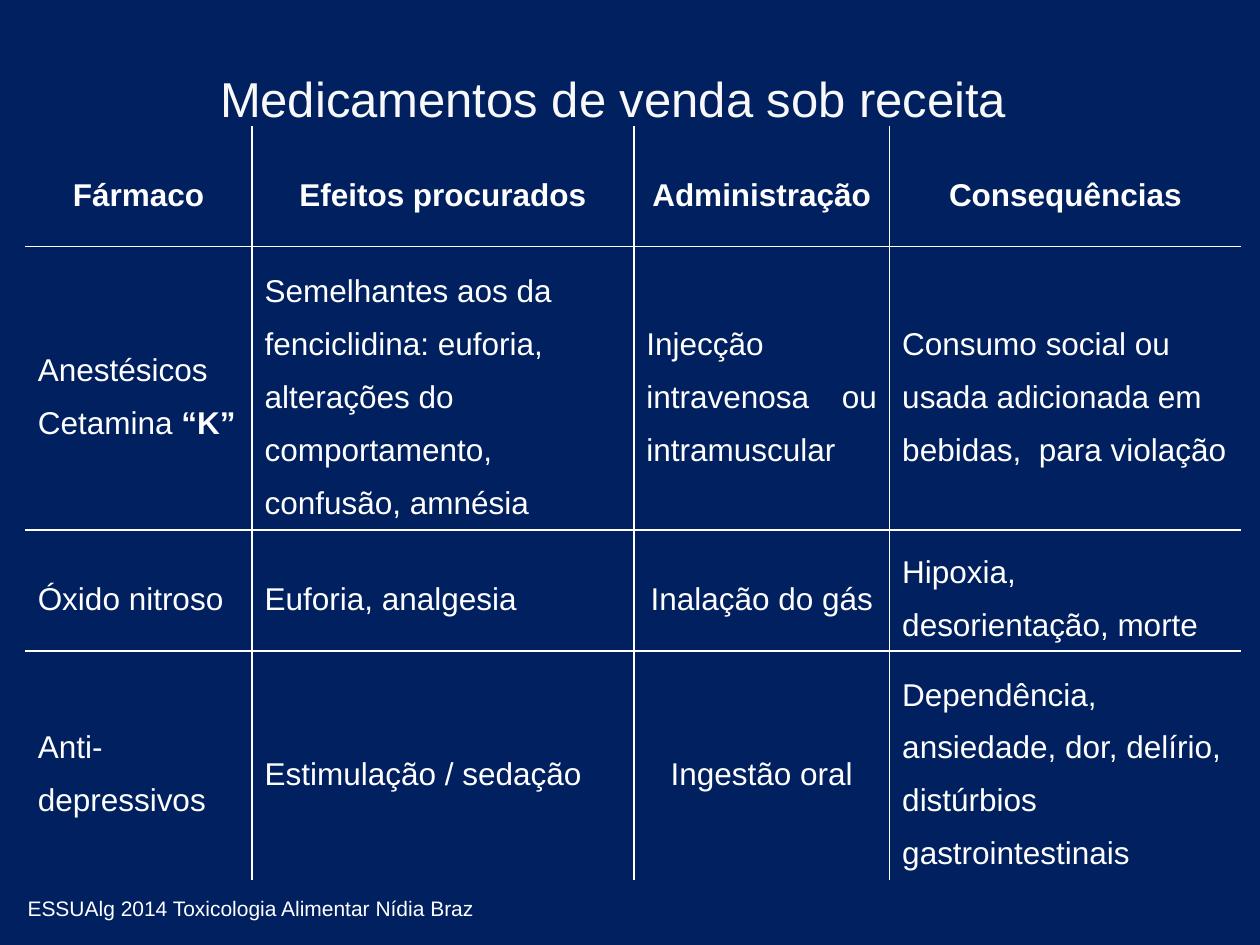
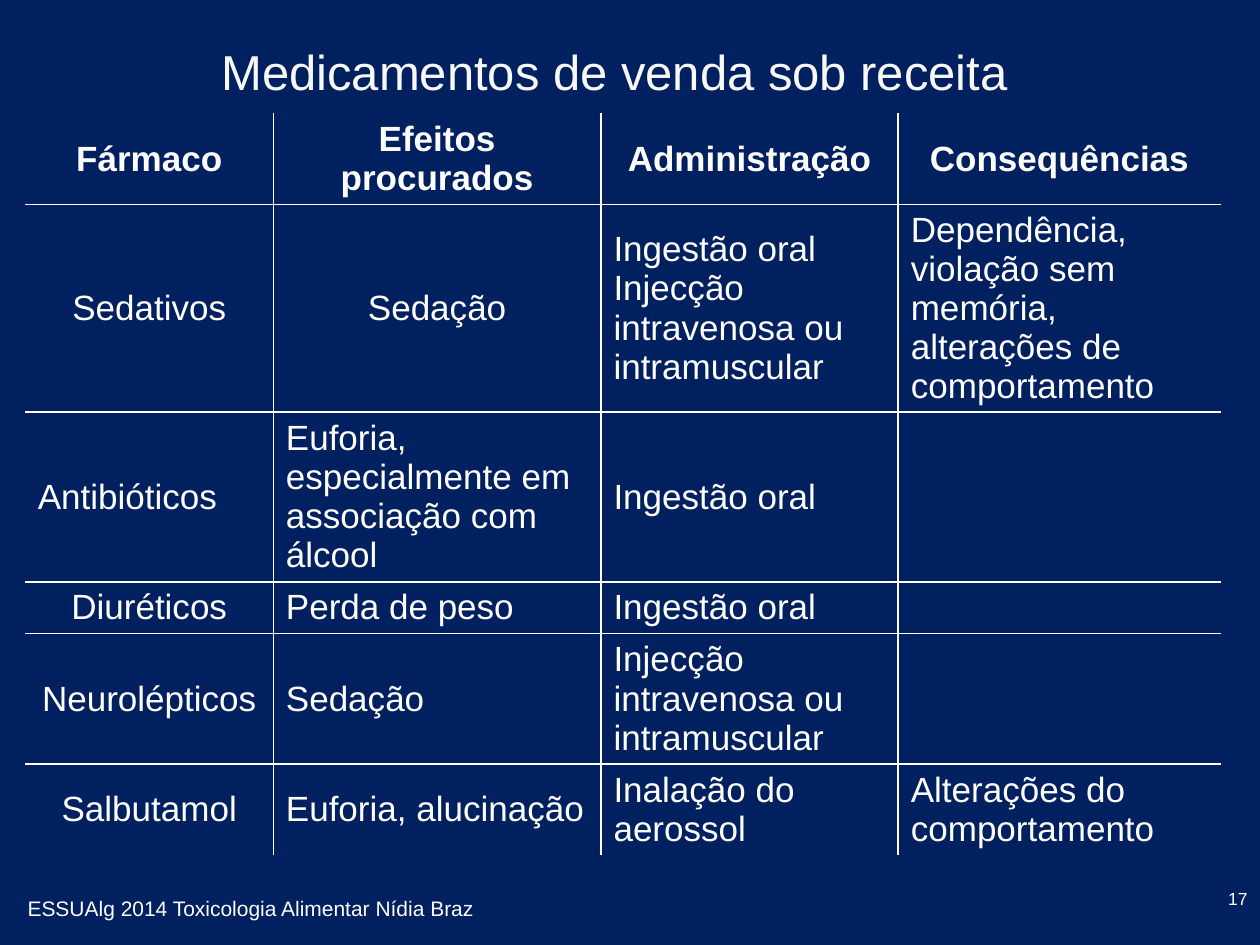
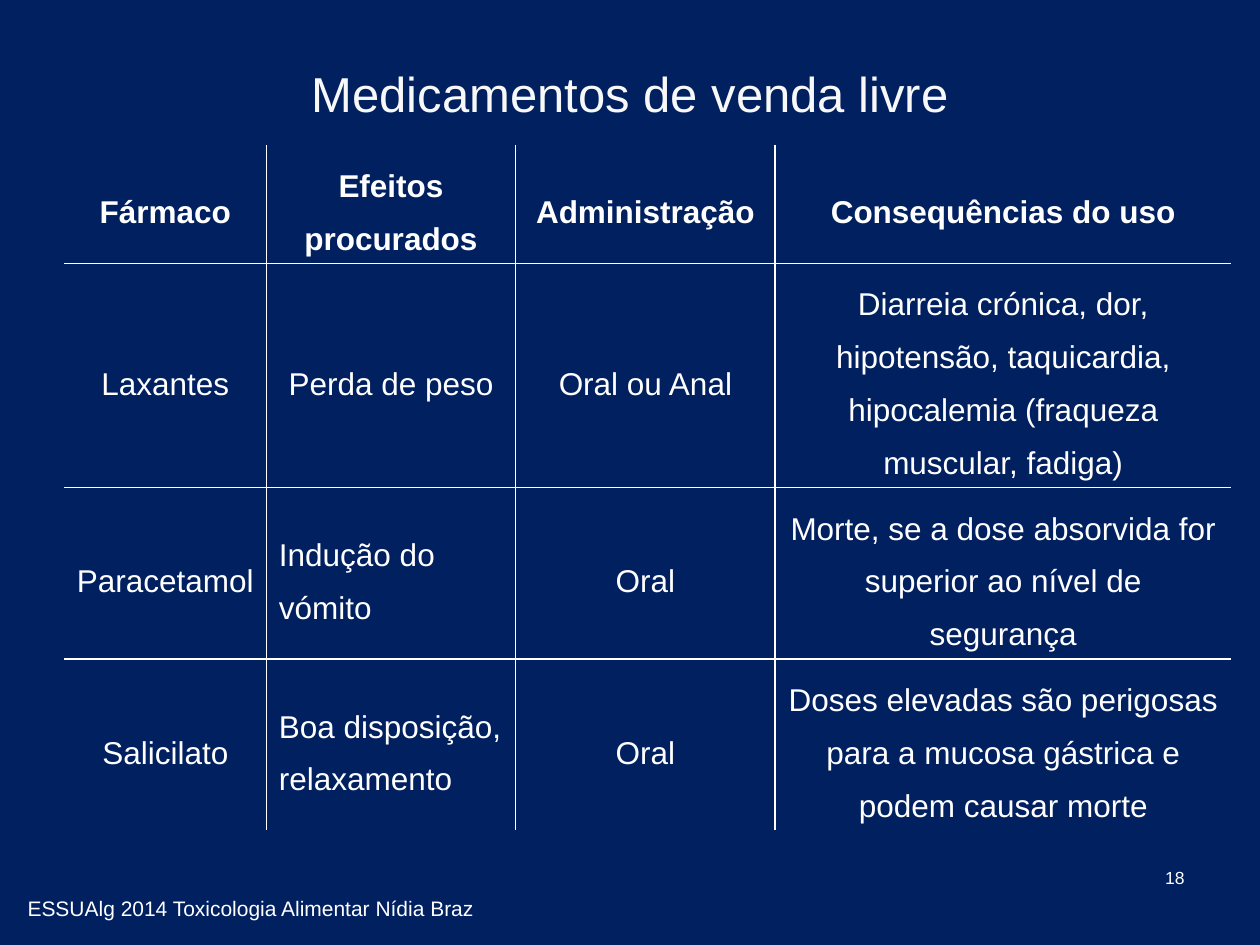
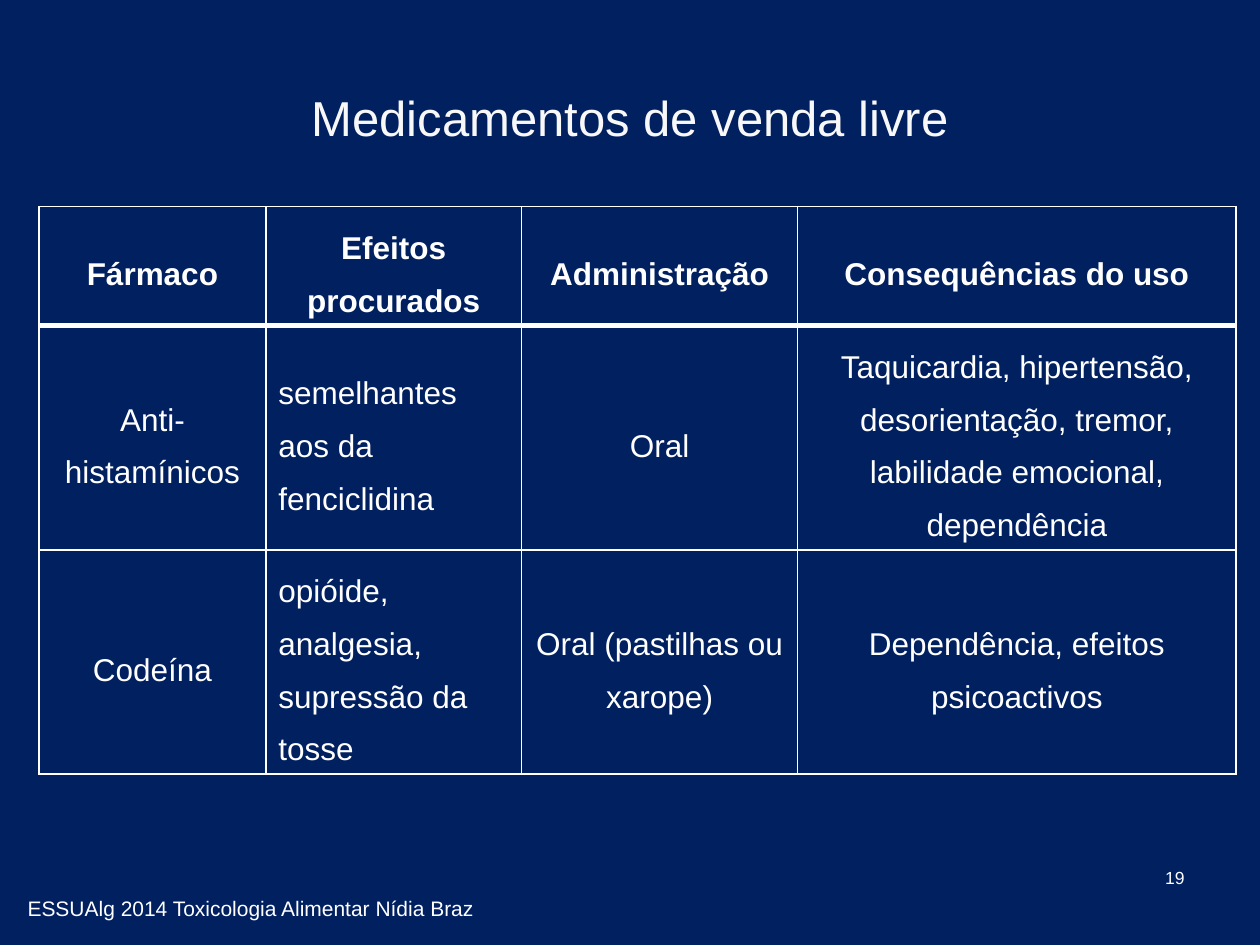
from dataclasses import dataclass

from lxml import etree
from pptx import Presentation
from pptx.dml.color import RGBColor
from pptx.enum.text import MSO_ANCHOR, MSO_AUTO_SIZE, PP_ALIGN
from pptx.oxml.ns import qn
from pptx.util import Pt

MIDDLE = MSO_ANCHOR.MIDDLE
NO_AUTOFIT = MSO_AUTO_SIZE.NONE
ALIGN = {"l": PP_ALIGN.LEFT, "c": PP_ALIGN.CENTER,
         "r": PP_ALIGN.RIGHT, "j": PP_ALIGN.JUSTIFY}
TITLE_ONLY = 5


@dataclass(frozen=True)
class Theme:
    font: str = "Arial"
    background: str = "002060"
    title_color: str = "F8F8F8"
    text_color: str = "FFFFFF"
    title_size: int = 28
    footer_size: int = 12
    number_size: int = 10
    rule: int = 1
    heavy_rule: int = 3


THEME = Theme()
FOOTER = "ESSUAlg 2014 Toxicologia Alimentar Nídia Braz"
FOOTER_BOX = (8.64, 508.3, 326, 23)
NUMBER_SIZE = (167.8, 36)
STREET_NAME = "“K”"  # the one bold part inside a body cell

PRESCRIPTION = "Medicamentos de venda sob receita"
OVER_THE_COUNTER = "Medicamentos de venda livre"
HEADINGS = ["Fármaco", "Efeitos procurados", "Administração"]
PRESCRIPTION_HEADINGS = HEADINGS + ["Consequências"]
FREE_HEADINGS = HEADINGS + ["Consequências do uso"]

# Each body row: one alignment letter per column, then the cells.
SLIDES = [
    dict(
        title=PRESCRIPTION, title_box=(16.6, 21.6, 667.4, 68.4),
        origin=(14.4, 72), columns=[129.6, 218.2, 146.2, 200.9],
        row_heights=[69, 162, 69, 131], size=18, spacing=1.5,
        headings=PRESCRIPTION_HEADINGS,
        body=[
            ("lljl", ["Anestésicos\nCetamina " + STREET_NAME,
                      "Semelhantes aos da fenciclidina: euforia, alterações do "
                      "comportamento, confusão, amnésia",
                      "Injecção intravenosa ou intramuscular",
                      "Consumo social ou usada adicionada em bebidas,  para violação"]),
            ("llcl", ["Óxido nitroso", "Euforia, analgesia", "Inalação do gás",
                      "Hipoxia, desorientação, morte"]),
            ("llcl", ["Anti-depressivos", "Estimulação / sedação", "Ingestão oral",
                      "Dependência, ansiedade, dor, delírio, distúrbios "
                      "gastrointestinais"]),
        ]),
    dict(
        title=PRESCRIPTION, title_box=(20.2, 15.1, 661.7, 51.1),
        origin=(14.4, 64.8), columns=[141.8, 187.2, 169.9, 184.3],
        row_heights=[52, 118.5, 97, 29.5, 74.5, 52], size=20, spacing=1,
        headings=PRESCRIPTION_HEADINGS,
        number="17", number_at=(552.2, 504),
        body=[
            ("ccll", ["Sedativos", "Sedação",
                      "Ingestão oral\nInjecção intravenosa ou intramuscular",
                      "Dependência,\nviolação sem memória,\n"
                      "alterações de comportamento"]),
            ("llll", ["Antibióticos", "Euforia, especialmente em associação com álcool",
                      "Ingestão oral", ""]),
            ("clll", ["Diuréticos", "Perda de peso", "Ingestão oral", ""]),
            ("clll", ["Neurolépticos", "Sedação",
                      "Injecção intravenosa ou intramuscular", ""]),
            ("clll", ["Salbutamol", "Euforia, alucinação", "Inalação do aerossol",
                      "Alterações do comportamento"]),
        ]),
    dict(
        title=OVER_THE_COUNTER, title_box=(36, 21.6, 648, 62.6),
        origin=(36.7, 82.8), columns=[115.5, 142.5, 148.3, 260.6],
        row_heights=[67.5, 128, 98, 98], size=18, spacing=1.5,
        headings=FREE_HEADINGS,
        number="18", number_at=(516.2, 491.8),
        body=[
            ("cccc", ["Laxantes", "Perda de peso", "Oral ou Anal",
                      "Diarreia crónica, dor, hipotensão, taquicardia, "
                      "hipocalemia (fraqueza muscular, fadiga)"]),
            ("llcc", ["Paracetamol", "Indução do vómito", "Oral",
                      "Morte, se a dose absorvida for superior ao nível de segurança"]),
            ("clcc", ["Salicilato", "Boa disposição, relaxamento", "Oral",
                      "Doses elevadas são perigosas para a mucosa gástrica e "
                      "podem causar morte"]),
        ]),
    dict(
        title=OVER_THE_COUNTER, title_box=(36, 21.6, 648, 90),
        origin=(22.3, 118.1), columns=[129.6, 146.2, 157.7, 250.6],
        row_heights=[68, 128, 128], size=18, spacing=1.5, framed=True,
        headings=FREE_HEADINGS,
        number="19", number_at=(516.2, 491.8),
        body=[
            ("clcc", ["Anti-histamínicos", "semelhantes aos da fenciclidina", "Oral",
                      "Taquicardia, hipertensão, desorientação, tremor, "
                      "labilidade emocional, dependência"]),
            ("clcc", ["Codeína", "opióide, analgesia, supressão da tosse",
                      "Oral (pastilhas ou xarope)",
                      "Dependência, efeitos psicoactivos"]),
        ]),
]


def format_text(frame, size, color=THEME.text_color, align="l", bold=False, spacing=None):
    for paragraph in frame.paragraphs:
        paragraph.alignment = ALIGN[align]
        paragraph.line_spacing = spacing
        for run in paragraph.runs:
            run.font.name = THEME.font
            run.font.size = Pt(size)
            run.font.bold = bold
            run.font.color.rgb = RGBColor.from_string(color)


def add_label(slide, text, box, size, align="l"):
    frame = slide.shapes.add_textbox(*map(Pt, box)).text_frame
    frame.word_wrap = True
    frame.text = text
    format_text(frame, size, align=align)


def set_title(slide, text, box):
    title = slide.shapes.title
    title.left, title.top, title.width, title.height = map(Pt, box)
    frame = title.text_frame
    frame.text = text
    frame.auto_size = NO_AUTOFIT
    frame.vertical_anchor = MIDDLE
    format_text(frame, THEME.title_size, THEME.title_color, "c")


def set_borders(cell, widths):
    """Draw the left, right, top and bottom borders; a width of 0 hides one."""
    properties = cell._tc.get_or_add_tcPr()
    for position, (side, width) in enumerate(zip("LRTB", widths)):
        line = etree.Element(qn(f"a:ln{side}"), w=str(Pt(width)))
        if width:
            fill = etree.SubElement(line, qn("a:solidFill"))
            etree.SubElement(fill, qn("a:srgbClr"), val=THEME.text_color)
        else:
            etree.SubElement(line, qn("a:noFill"))
        properties.insert(position, line)


def embolden(paragraph, part):
    """Split the bold part off the end of a paragraph's only run."""
    lead = paragraph.runs[0]
    lead.text = lead.text.removesuffix(part)
    tail = paragraph.add_run()
    tail.text = part
    return tail


def fill_cell(cell, text, align, bold, content):
    cell.fill.background()
    cell.vertical_anchor = MIDDLE
    frame = cell.text_frame
    frame.text = text
    street_name = None
    if text.endswith(STREET_NAME):
        street_name = embolden(frame.paragraphs[-1], STREET_NAME)
    format_text(frame, content["size"], align=align, bold=bold,
                spacing=content["spacing"])
    if street_name:
        street_name.font.bold = True


def add_drug_table(slide, content):
    columns, heights = content["columns"], content["row_heights"]
    rows = [("c" * len(columns), content["headings"])] + content["body"]
    framed = content.get("framed", False)
    outer = THEME.rule if framed else 0
    below_headings = THEME.heavy_rule if framed else THEME.rule
    across = [outer, below_headings] + [THEME.rule] * (len(rows) - 2) + [outer]
    down = [outer] + [THEME.rule] * (len(columns) - 1) + [outer]

    box = (*content["origin"], sum(columns), sum(heights))
    table = slide.shapes.add_table(len(rows), len(columns), *map(Pt, box)).table
    table.first_row = table.horz_banding = False
    for column, width in zip(table.columns, columns):
        column.width = Pt(width)
    for r, (aligns, texts) in enumerate(rows):
        table.rows[r].height = Pt(heights[r])
        for c, (align, text) in enumerate(zip(aligns, texts)):
            cell = table.cell(r, c)
            fill_cell(cell, text, align, r == 0, content)
            set_borders(cell, (down[c], down[c + 1], across[r], across[r + 1]))


def add_drug_slide(prs, content):
    slide = prs.slides.add_slide(prs.slide_layouts[TITLE_ONLY])
    background = slide.background.fill
    background.solid()
    background.fore_color.rgb = RGBColor.from_string(THEME.background)
    set_title(slide, content["title"], content["title_box"])
    add_drug_table(slide, content)
    if "number" in content:
        add_label(slide, content["number"], content["number_at"] + NUMBER_SIZE,
                  THEME.number_size, "r")
    add_label(slide, FOOTER, FOOTER_BOX, THEME.footer_size)


def main():
    prs = Presentation()
    prs.slide_width, prs.slide_height = Pt(720), Pt(540)
    for content in SLIDES:
        add_drug_slide(prs, content)
    prs.save("out.pptx")


if __name__ == "__main__":
    main()
